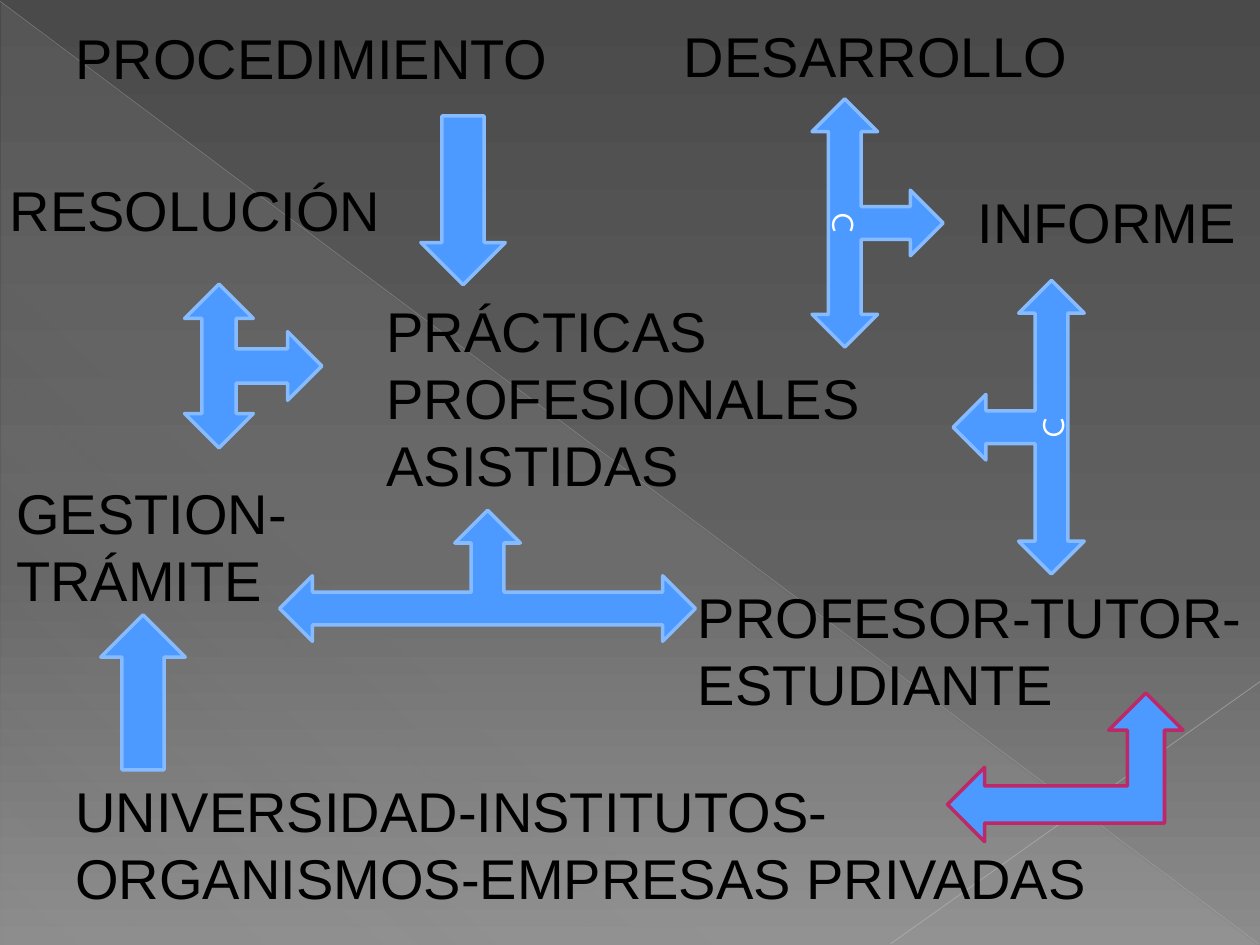
from dataclasses import dataclass

from lxml.etree import SubElement
from pptx import Presentation
from pptx.dml.color import RGBColor
from pptx.enum.shapes import MSO_CONNECTOR, MSO_SHAPE
from pptx.enum.text import MSO_ANCHOR, MSO_AUTO_SIZE, PP_ALIGN
from pptx.oxml.ns import qn
from pptx.util import Pt

PX = 9144  # EMU per px, 100 px to the inch


@dataclass(frozen=True)
class Theme:
    ink: str = "000000"
    arrow: str = "4C99FF"
    arrow_edge: str = "87BBFF"
    accent_edge: str = "BD2968"
    mark: str = "FFFFFF"
    sheen: str = "D2D2D2"
    falling_line: str = "BFBFBF"
    rising_line: str = "C6C6C6"
    backdrop: tuple = ((0, "4A4A4A", 100), (60, "626262", 100), (100, "8C8C8C", 100))
    label_font: str = "Arial"
    mark_font: str = "League Spartan"
    label_size: int = 32
    mark_size: int = 18


theme = Theme()


def set_gradient(element, stops, angle):
    """Give the gradient fill in element its (position, colour, opacity) stops."""
    gradient = element.find(".//" + qn("a:gradFill"))
    for child in list(gradient):
        gradient.remove(child)
    stop_list = SubElement(gradient, qn("a:gsLst"))
    for position, color, opacity in stops:
        stop = SubElement(stop_list, qn("a:gs"), pos=str(position * 1000))
        rgb = SubElement(stop, qn("a:srgbClr"), val=color)
        SubElement(rgb, qn("a:alpha"), val=str(opacity * 1000))
    SubElement(gradient, qn("a:lin"), ang=str(angle * 60000), scaled="0")


def add_run(paragraph, text, font, size, color):
    run = paragraph.add_run()
    run.text = text
    run.font.name = font
    run.font.size = Pt(size)
    run.font.color.rgb = RGBColor.from_string(color)


prs = Presentation()
prs.slide_width = 1000 * PX
prs.slide_height = 750 * PX
slide = prs.slides.add_slide(prs.slide_layouts[6])

# Background gradient
slide.background.fill.gradient()
set_gradient(slide.background._cSld, theme.backdrop, 90)

# Pale triangle and the two thin diagonals
sheen = slide.shapes.add_shape(
    MSO_SHAPE.RIGHT_TRIANGLE, 1 * PX, 2 * PX, 998 * PX, 748 * PX)
sheen.shadow.inherit = False
sheen.line.fill.background()
sheen.fill.gradient()
set_gradient(sheen._element.spPr,
             [(0, theme.sheen, 10), (70, theme.sheen, 8), (100, theme.sheen, 1)], 133)

diagonals = [
    ((0, 1, 999, 749), theme.falling_line, 0.39, 35),
    ((1000, 541, 707, 749), theme.rising_line, 0.47, 45),
]
for ends, color, weight, opacity in diagonals:
    diagonal = slide.shapes.add_connector(
        MSO_CONNECTOR.STRAIGHT, *(value * PX for value in ends))
    diagonal.line.width = Pt(weight)
    diagonal.line.color.rgb = RGBColor.from_string(color)
    properties = diagonal._element.spPr
    rgb = properties.find(".//" + qn("a:srgbClr"))
    SubElement(rgb, qn("a:alpha"), val=str(opacity * 1000))
    SubElement(properties, qn("a:effectLst"))

# Labels: left, top, width, height, lines
labels = [
    (297, 230, 399, 172, ["PRÁCTICAS", "PROFESIONALES", "ASISTIDAS"]),
    (544, 457, 456, 118, ["PROFESOR-TUTOR-", "ESTUDIANTE"]),
    (50, 14, 398, 64, ["PROCEDIMIENTO"]),
    (533, 12, 327, 64, ["DESARROLLO"]),
    (-2, 134, 317, 64, ["RESOLUCIÓN"]),
    (3, 375, 249, 118, ["GESTION-", "TRÁMITE"]),
    (50, 611, 843, 118, ["UNIVERSIDAD-INSTITUTOS-", "ORGANISMOS-EMPRESAS PRIVADAS"]),
    (766, 144, 227, 64, ["INFORME"]),
]
for left, top, width, height, lines in labels:
    label = slide.shapes.add_textbox(left * PX, top * PX, width * PX, height * PX)
    frame = label.text_frame
    frame.word_wrap = False
    frame.auto_size = MSO_AUTO_SIZE.SHAPE_TO_FIT_TEXT
    for index, line in enumerate(lines):
        paragraph = frame.add_paragraph() if index else frame.paragraphs[0]
        add_run(paragraph, line, theme.label_font, theme.label_size, theme.ink)

# Arrows: preset, left, top, width, height, rotation, edge, mark
down, corner, three_way = (
    MSO_SHAPE.DOWN_ARROW, MSO_SHAPE.LEFT_UP_ARROW, MSO_SHAPE.LEFT_RIGHT_UP_ARROW)
arrows = [
    (down, 334, 92, 67, 134, 0, theme.arrow_edge, ""),
    (corner, 752, 550, 187, 118, 0, theme.accent_edge, ""),
    (three_way, 692, 287, 233, 104, 270, theme.arrow_edge, "C"),
    (three_way, 136, 236, 130, 109, 90, theme.arrow_edge, ""),
    (three_way, 222, 405, 330, 104, 0, theme.arrow_edge, ""),
    (down, 80, 488, 67, 123, 180, theme.arrow_edge, ""),
    (three_way, 598, 125, 197, 104, 90, theme.arrow_edge, "C"),
]
for preset, left, top, width, height, rotation, edge, mark in arrows:
    arrow = slide.shapes.add_shape(preset, left * PX, top * PX, width * PX, height * PX)
    arrow.rotation = rotation
    arrow.shadow.inherit = False
    arrow.fill.solid()
    arrow.fill.fore_color.rgb = RGBColor.from_string(theme.arrow)
    arrow.line.color.rgb = RGBColor.from_string(edge)
    arrow.line.width = Pt(2)
    if mark:
        arrow.text_frame.vertical_anchor = MSO_ANCHOR.MIDDLE
        paragraph = arrow.text_frame.paragraphs[0]
        paragraph.alignment = PP_ALIGN.CENTER
        add_run(paragraph, mark, theme.mark_font, theme.mark_size, theme.mark)

prs.save("out.pptx")
